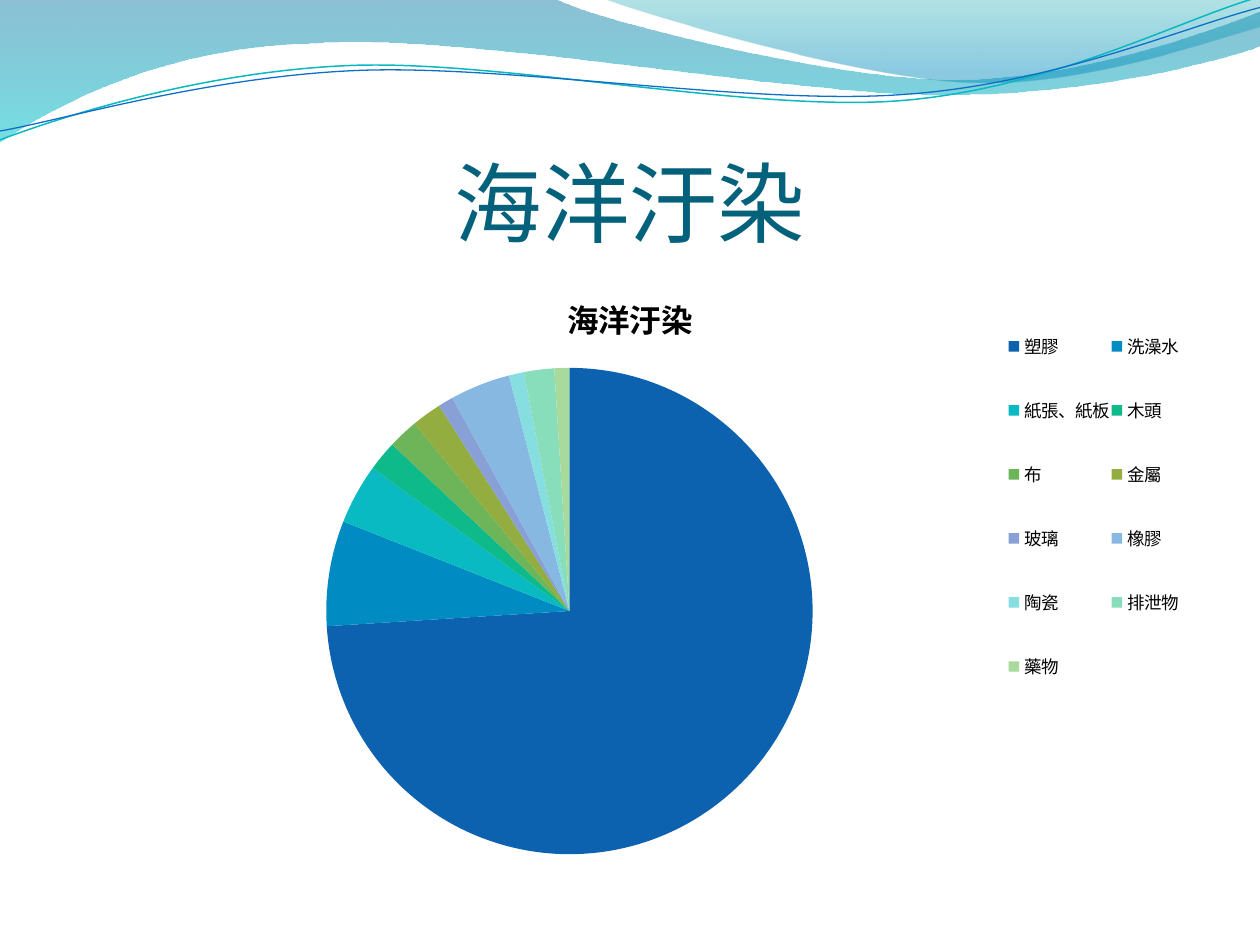
from math import cos, radians, sin

from lxml.etree import SubElement
from pptx import Presentation
from pptx.chart.data import CategoryChartData
from pptx.dml.color import RGBColor
from pptx.enum.chart import XL_CHART_TYPE, XL_LEGEND_POSITION
from pptx.enum.text import MSO_ANCHOR, PP_ALIGN
from pptx.oxml import parse_xml
from pptx.oxml.ns import nsdecls, qn
from pptx.util import Inches, Pt

BLACK = RGBColor(0x00, 0x00, 0x00)
TITLE = RGBColor(0x04, 0x61, 0x7B)
TEAL = RGBColor(0x0A, 0xB8, 0xBF)
BLUE = RGBColor(0x0F, 0x6F, 0xC6)
# Each stop: position, colour, opacity in percent
BAND = [(0, RGBColor(0x00, 0x74, 0xA1), 45), (1, RGBColor(0x00, 0xC6, 0xCF), 55)]
CREST = [(0, RGBColor(0x00, 0xA1, 0xA9), 30), (0.8, RGBColor(0x00, 0x8B, 0xBF), 45)]
TILT = 2.7

TOPIC = "海洋汙染"
SLICES = [
    ("塑膠", 74, RGBColor(0x0C, 0x62, 0xAF)),
    ("洗澡水", 7, RGBColor(0x00, 0x8C, 0xC2)),
    ("紙張、紙板", 4, RGBColor(0x09, 0xBA, 0xC2)),
    ("木頭", 2, RGBColor(0x0E, 0xB9, 0x8A)),
    ("布", 2, RGBColor(0x6E, 0xB5, 0x59)),
    ("金屬", 2, RGBColor(0x93, 0xAD, 0x40)),
    ("玻璃", 1, RGBColor(0x88, 0xA0, 0xD6)),
    ("橡膠", 4, RGBColor(0x86, 0xB8, 0xE1)),
    ("陶瓷", 1, RGBColor(0x87, 0xDE, 0xE1)),
    ("排泄物", 2, RGBColor(0x88, 0xDD, 0xBA)),
    ("藥物", 1, RGBColor(0xA8, 0xDA, 0x9B)),
]


def add_path(slide, left, top, legs, close):
    """Draw legs of one point (line) or three points (cubic curve)."""
    spots = [(Inches(left + x), Inches(top + y)) for leg in legs for x, y in leg]
    pen = slide.shapes.build_freeform(*spots[0])
    pen.add_line_segments(spots[1:], close=close)
    shape = pen.convert_to_shape()
    shape.shadow.inherit = False
    lines = iter(list(shape._element.iter(qn("a:lnTo"))))
    for leg in legs[1:]:
        group = [next(lines) for _ in leg]
        if len(leg) == 3:
            curve = parse_xml(f"<a:cubicBezTo {nsdecls('a')}/>")
            group[0].addprevious(curve)
            for line in group:
                curve.append(line[0])
                line.getparent().remove(line)
    return shape


def add_band(slide, left, top, legs, stops):
    shape = add_path(slide, left, top, legs, True)
    shape.line.fill.background()
    shape.fill.gradient()
    shape.fill.gradient_angle = 270
    for stop, (place, color, _) in zip(shape.fill.gradient_stops, stops):
        stop.position = place
        stop.color.rgb = color
    tones = shape._element.spPr.iter(qn("a:srgbClr"))
    for tone, (_, _, alpha) in zip(tones, stops):
        SubElement(tone, qn("a:alpha"), val=str(alpha * 1000))


def turn(legs, mid, angle):
    """Turn all points clockwise about mid."""
    c, s = cos(radians(angle)), sin(radians(angle))
    mx, my = mid
    return [[(mx + (x - mx) * c - (y - my) * s, my + (x - mx) * s + (y - my) * c)
             for x, y in leg] for leg in legs]


def add_curve(slide, left, top, legs, mid, color, width):
    """Draw a curve level, then tilt it back about mid."""
    shape = add_path(slide, left, top, turn(legs, mid, TILT), False)
    shape.rotation = 360 - TILT
    shape.fill.background()
    shape.line.color.rgb = color
    shape.line.width = Pt(width)


def add_waves(slide, left, top):
    add_band(slide, left, top, [
        [(0, 0)], [(4.4, -0.01)],
        [(4.76, 0.17), (6.64, 0.63), (7.58, 0.63)],
        [(8.53, 0.63), (9.58, 0.26), (10, 0.09)], [(10.01, 0.36)],
        [(9.83, 0.44), (8.7, 0.76), (7.46, 0.75)],
        [(6.22, 0.75), (3.82, 0.28), (2.57, 0.34)],
        [(1.29, 0.36), (0.46, 0.83), (-0.01, 1.13)]], BAND)
    add_band(slide, left, top, [
        [(4.79, -0.01)],
        [(5.09, 0.11), (6.82, 0.62), (7.69, 0.65)],
        [(8.56, 0.69), (9.61, 0.32), (10, 0.21)], [(10, 0)]], CREST)
    add_curve(slide, left, top, [
        [(0, 1.11)],
        [(0.48, 0.93), (1.58, 0.57), (2.77, 0.52)],
        [(3.95, 0.47), (5.93, 0.89), (7.13, 0.8)],
        [(8.33, 0.71), (9.38, 0.15), (9.98, -0.02)]], (4.99, 0.58), TEAL, 0.85)
    add_curve(slide, left, top, [
        [(0, 1.04)],
        [(0.47, 0.96), (1.64, 0.61), (2.83, 0.56)],
        [(4.03, 0.51), (5.97, 0.84), (7.17, 0.75)],
        [(8.36, 0.67), (9.41, 0.21), (10, 0.06)]], (5, 0.59), BLUE, 0.75)


def set_title(slide, left, top, width, height):
    title = slide.shapes.title
    title.left, title.top = Inches(left), Inches(top)
    title.width, title.height = Inches(width), Inches(height)
    frame = title.text_frame
    frame.vertical_anchor = MSO_ANCHOR.BOTTOM
    frame.margin_left = frame.margin_right = frame.margin_bottom = 0
    frame.margin_top = Inches(0.05)
    para = frame.paragraphs[0]
    para.alignment = PP_ALIGN.CENTER
    run = para.add_run()
    run.text = TOPIC
    run.font.size = Pt(50)
    run.font.name = "Calibri"
    run.font.color.rgb = TITLE


def set_layout(parent, index, inner, box, size):
    """Fix a chart part to a box in inches within a chart of that size."""
    for old in parent.findall(qn("c:layout")):
        parent.remove(old)
    layout = parse_xml(f"<c:layout {nsdecls('c')}><c:manualLayout/></c:layout>")
    if inner:
        SubElement(layout[0], qn("c:layoutTarget"), val="inner")
    for key in "xy":
        SubElement(layout[0], qn(f"c:{key}Mode"), val="edge")
    for key, value, whole in zip("xywh", box, size * 2):
        SubElement(layout[0], qn(f"c:{key}"), val=str(value / whole))
    parent.insert(index, layout)


def add_pie(slide, left, top, width, height):
    data = CategoryChartData()
    data.categories = [name for name, _, _ in SLICES]
    data.add_series(TOPIC, [value for _, value, _ in SLICES])
    chart = slide.shapes.add_chart(
        XL_CHART_TYPE.PIE, Inches(left), Inches(top),
        Inches(width), Inches(height), data).chart
    chart.font.size = Pt(10)
    chart.font.name = "Cambria"
    chart.font.color.rgb = BLACK

    chart.has_title = True
    run = chart.chart_title.text_frame.paragraphs[0].add_run()
    run.text = TOPIC
    run.font.size = Pt(18)
    run.font.bold = True
    run.font.name = "Cambria"
    run.font.color.rgb = BLACK

    plot = chart.plots[0]
    plot.vary_by_categories = True
    for i, (_, _, color) in enumerate(SLICES):
        fill = plot.series[0].points[i].format.fill
        fill.solid()
        fill.fore_color.rgb = color
    size = (width, height)
    set_layout(chart._chartSpace.chart.plotArea, 0, True,
               (2.09, 0.8, 3.86, 3.86), size)

    chart.has_legend = True
    chart.legend.position = XL_LEGEND_POSITION.RIGHT
    chart.legend.include_in_layout = False
    set_layout(chart.legend._element, 1, False, (7.49, 0.22, 1.38, 3.36), size)


def main():
    deck = Presentation()
    deck.slide_width, deck.slide_height = Inches(10), Inches(7.5)
    slide = deck.slides.add_slide(deck.slide_layouts[5])
    add_waves(slide, 0, 0)
    set_title(slide, 0.5, 0.77, 9, 1.25)
    add_pie(slide, 0.5, 2.12, 9, 4.8)
    deck.save("out.pptx")


if __name__ == "__main__":
    main()
